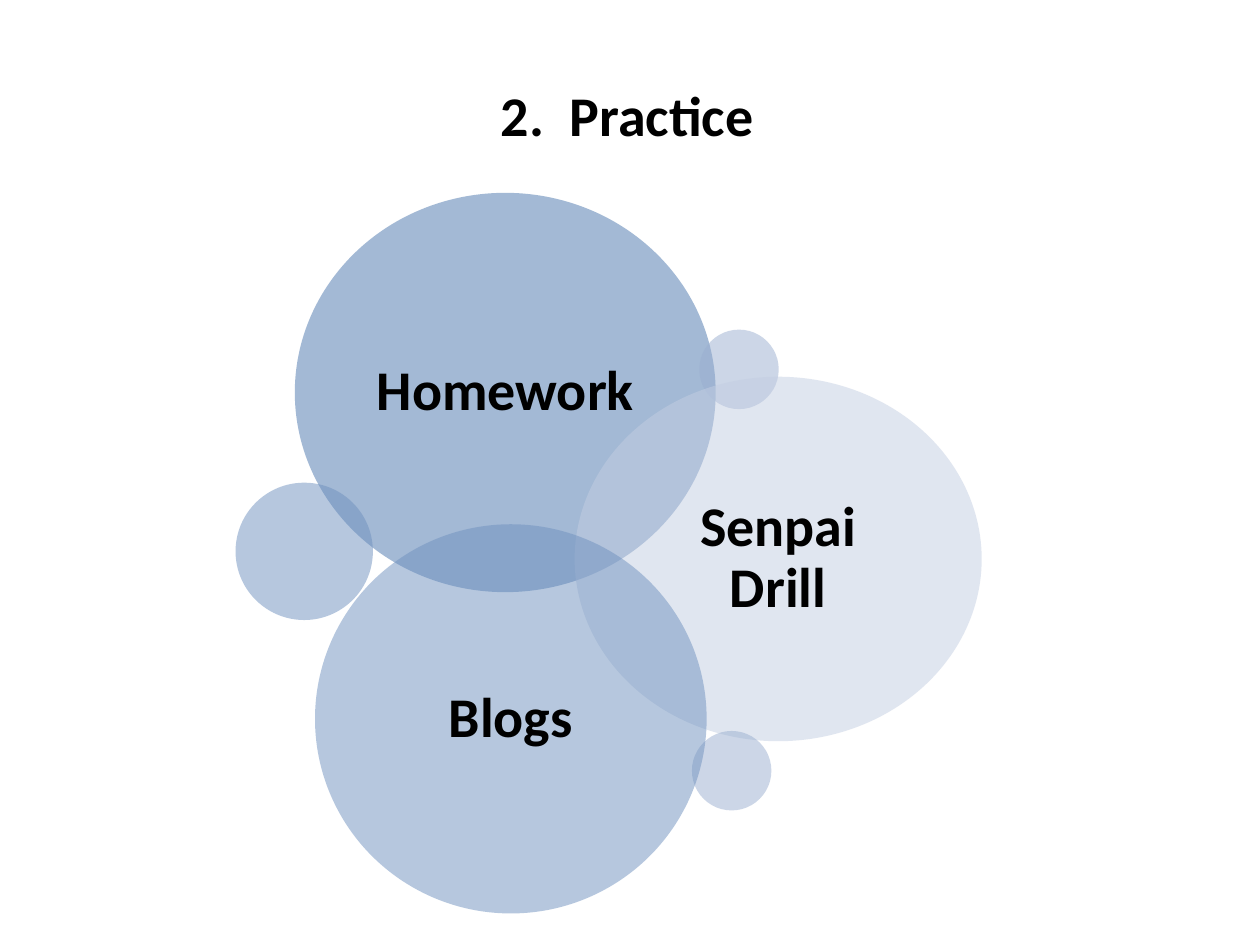
from math import sqrt

from lxml.etree import SubElement
from pptx import Presentation
from pptx.dml.color import RGBColor
from pptx.enum.shapes import MSO_SHAPE
from pptx.enum.text import MSO_ANCHOR, PP_ALIGN
from pptx.oxml.ns import qn
from pptx.util import Pt

DEEP_BLUE = RGBColor(0x48, 0x75, 0xAC)
MID_BLUE = RGBColor(0x6F, 0x91, 0xBF)
SOFT_BLUE = RGBColor(0x9A, 0xAF, 0xD0)
PALE_BLUE = RGBColor(0xC3, 0xCE, 0xE2)
BLACK = RGBColor(0, 0, 0)


class BubbleSlide:
    font_name = "Calibri"
    font_size = 32
    padding = 9.4
    opacity = 50

    def __init__(self, deck):
        self.slide = deck.slides.add_slide(deck.slide_layouts[6])

    def text(self, left, top, width, height, wording):
        box = self.slide.shapes.add_textbox(Pt(left), Pt(top), Pt(width), Pt(height))
        frame = box.text_frame
        frame.word_wrap = True
        frame.vertical_anchor = MSO_ANCHOR.MIDDLE
        frame.margin_left = frame.margin_right = Pt(self.padding)
        frame.margin_top = frame.margin_bottom = Pt(self.padding)
        para = frame.paragraphs[0]
        para.alignment = PP_ALIGN.CENTER
        para.line_spacing = 0.9
        span = para.add_run()
        span.text = wording
        span.font.name = self.font_name
        span.font.size = Pt(self.font_size)
        span.font.bold = True
        span.font.color.rgb = BLACK

    def bubble(self, left, top, width, height, color, label=None):
        """Draw a translucent ellipse, its label in the inscribed rectangle."""
        ellipse = self.slide.shapes.add_shape(
            MSO_SHAPE.OVAL, Pt(left), Pt(top), Pt(width), Pt(height))
        ellipse.shadow.inherit = False
        ellipse.line.fill.background()
        ellipse.fill.solid()
        ellipse.fill.fore_color.rgb = color
        color_element = ellipse.element.spPr.find(qn("a:solidFill"))[0]
        SubElement(color_element, qn("a:alpha"), val=str(self.opacity * 1000))
        if label:
            scale = 1 / sqrt(2)
            inset = (1 - scale) / 2
            self.text(left + width * inset, top + height * inset,
                      width * scale, height * scale, label)


def main():
    deck = Presentation()
    deck.slide_width, deck.slide_height = Pt(720), Pt(540)
    page = BubbleSlide(deck)

    page.bubble(168.5, 110.2, 240.5, 228.2, DEEP_BLUE, "Homework")
    page.bubble(134.6, 275.8, 78.5, 78.5, MID_BLUE)
    page.bubble(399.6, 188.4, 45.4, 45.4, SOFT_BLUE)
    page.bubble(328.4, 215.3, 232.6, 208.3, PALE_BLUE, "Senpai Drill")
    page.bubble(395.4, 417.7, 45.4, 45.4, SOFT_BLUE)
    page.bubble(180, 299.6, 223.8, 222.4, MID_BLUE, "Blogs")
    page.text(158.4, 20.9, 400.3, 92.9, "2.  Practice")

    deck.save("out.pptx")


if __name__ == "__main__":
    main()
